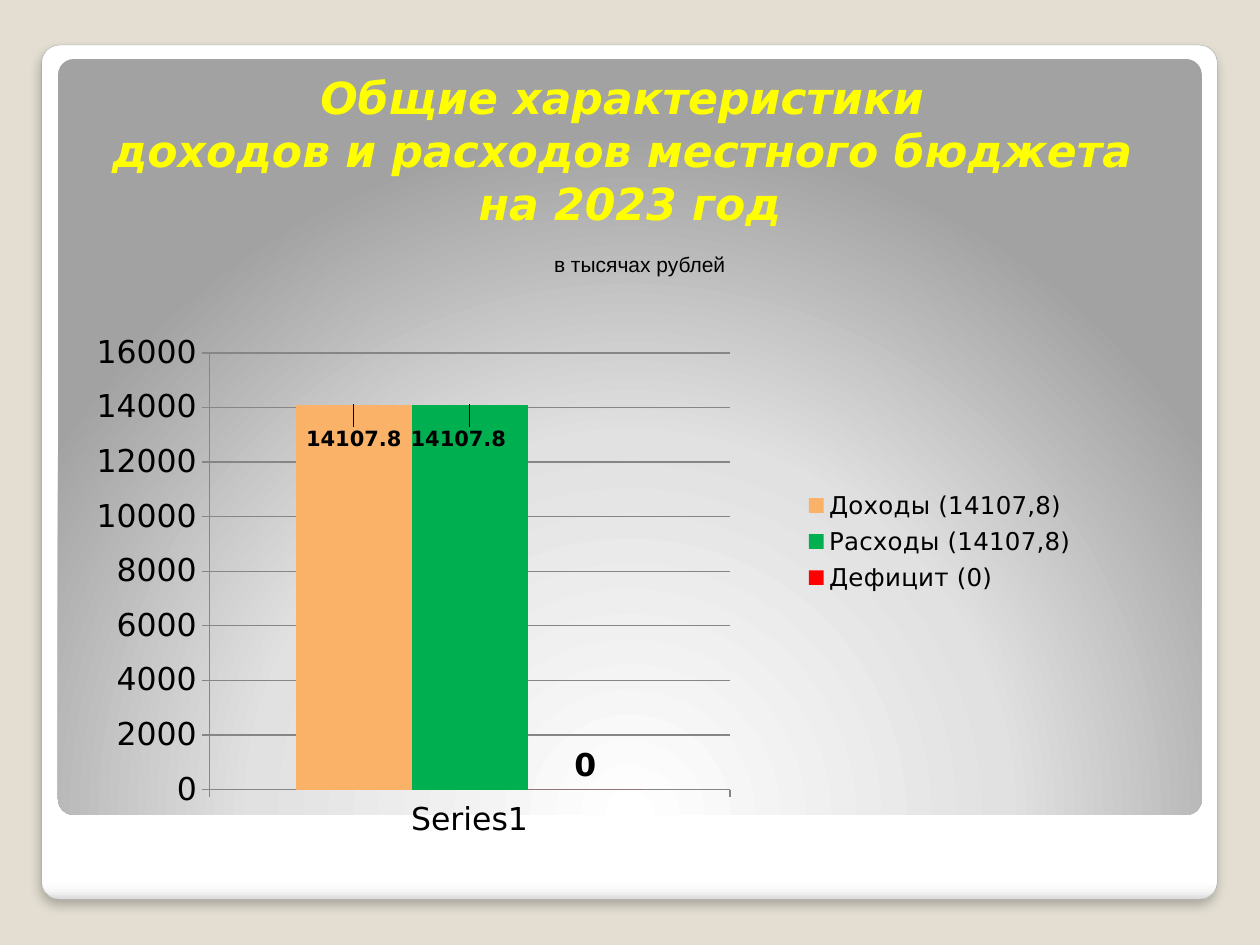
import lxml.etree
import pptx
import pptx.chart.data
import pptx.dml.color
import pptx.enum.chart
import pptx.enum.shapes
import pptx.enum.text
import pptx.oxml
import pptx.oxml.ns
import pptx.util

Cm = pptx.util.Cm
Pt = pptx.util.Pt
RGBColor = pptx.dml.color.RGBColor
qn = pptx.oxml.ns.qn

BEIGE = RGBColor(0xE3, 0xDE, 0xD1)
BORDER = RGBColor(0xA4, 0xA4, 0xA4)
GRID = RGBColor(0x86, 0x86, 0x86)
YELLOW = RGBColor(0xFF, 0xFF, 0x00)
BLACK = RGBColor(0x00, 0x00, 0x00)
ORANGE = RGBColor(0xF9, 0xB2, 0x68)
GREEN = RGBColor(0x00, 0xB0, 0x50)
RED = RGBColor(0xFF, 0x00, 0x00)
WHITE = RGBColor(0xFF, 0xFF, 0xFF)
PANEL_STOPS = [(0, WHITE), (98, WHITE), (99, RGBColor(0xF7, 0xF7, 0xF7)),
               (100, RGBColor(0xDA, 0xDA, 0xDA))]
GLOW_STOPS = [(0, WHITE), (55, RGBColor(0xE1, 0xE1, 0xE1)),
              (100, RGBColor(0xA2, 0xA2, 0xA2))]
LINEAR = '<a:lin ang="5400000" scaled="0"/>'
CIRCLE = ('<a:path path="circle"><a:fillToRect l="50000" t="175000" '
          'r="50000" b="-75000"/></a:path>')
SHADOW = ('<a:effectLst %s><a:outerShdw blurRad="76200" dist="50800" dir="5400000" '
          'algn="tl" rotWithShape="0"><a:srgbClr val="000000"><a:alpha val="25000"/>'
          '</a:srgbClr></a:outerShdw></a:effectLst>' % pptx.oxml.ns.nsdecls("a"))


class BudgetSlide:
    """Holds the fonts and the current slide, and adds styled elements to it."""

    font = "DejaVu Sans"
    note_font = "Arial"

    def __init__(self, prs):
        self.s = prs.slides.add_slide(prs.slide_layouts[6])
        fill = self.s.background.fill
        fill.solid()
        fill.fore_color.rgb = BEIGE

    def style(self, font, size, color, bold=False, italic=False, name=None):
        font.name = name or self.font
        font.size = Pt(size)
        font.color.rgb = color
        font.bold = bold
        font.italic = italic

    def panel(self, box, stops, direction, border=None, shadow=False):
        sp = self.s.shapes.add_shape(pptx.enum.shapes.MSO_SHAPE.ROUNDED_RECTANGLE,
                                     *map(Cm, box))
        sp.adjustments[0] = 0.021
        sp.shadow.inherit = False
        marks = "".join(f'<a:gs pos="{pos * 1000}"><a:srgbClr val="{color}"/></a:gs>'
                        for pos, color in stops)
        props = sp.element.spPr
        props.find(qn("a:prstGeom")).addnext(pptx.oxml.parse_xml(
            f'<a:gradFill {pptx.oxml.ns.nsdecls("a")} rotWithShape="1">'
            f'<a:gsLst>{marks}</a:gsLst>{direction}</a:gradFill>'))
        if border is None:
            sp.line.fill.background()
        else:
            sp.line.color.rgb = border
            sp.line.width = Pt(0.16)
        if shadow:
            effects = props.find(qn("a:effectLst"))
            props.replace(effects, pptx.oxml.parse_xml(SHADOW))

    def text(self, box, text, size, color, align, anchor, wrap=True, **style):
        tf = self.s.shapes.add_textbox(*map(Cm, box)).text_frame
        tf.word_wrap = wrap
        tf.vertical_anchor = anchor
        tf.text = text
        p = tf.paragraphs[0]
        p.alignment = align
        for r in p.runs:
            self.style(r.font, size, color, **style)

    def layout(self, parent, index, **values):
        layout = lxml.etree.Element(qn("c:layout"))
        manual = lxml.etree.SubElement(layout, qn("c:manualLayout"))
        for tag, value in values.items():
            lxml.etree.SubElement(manual, qn("c:" + tag)).set("val", str(value))
        for old in parent.findall(qn("c:layout")):
            parent.remove(old)
        parent.insert(index, layout)

    def column_chart(self, box, category, series):
        data = pptx.chart.data.CategoryChartData()
        data.categories = [category]
        for name, value, *_ in series:
            data.add_series(name, [value])
        chart = self.s.shapes.add_chart(
            pptx.enum.chart.XL_CHART_TYPE.COLUMN_CLUSTERED, *map(Cm, box), data).chart
        self.style(chart.font, 18, BLACK)
        chart.has_title = False
        chart.has_legend = True
        chart.legend.position = pptx.enum.chart.XL_LEGEND_POSITION.RIGHT
        chart.legend.include_in_layout = False
        self.style(chart.legend.font, 14, BLACK)
        self.layout(chart.legend._element, 1, xMode="edge", yMode="edge",
                    x=0.66, y=0.31, w=0.26, h=0.2)
        self.layout(chart.plots[0]._element.getparent(), 0, layoutTarget="inner",
                    xMode="edge", yMode="edge", x=0.142, y=0.083, w=0.462, h=0.757)
        for axis in (chart.category_axis, chart.value_axis):
            axis.format.line.color.rgb = GRID
            axis.major_tick_mark = pptx.enum.chart.XL_TICK_MARK.OUTSIDE
        axis = chart.value_axis
        axis.minimum_scale, axis.maximum_scale, axis.major_unit = 0, 16000, 2000
        axis.major_gridlines.format.line.color.rgb = GRID
        plot = chart.plots[0]
        plot.gap_width = 150
        plot.overlap = 0
        plot.vary_by_categories = False
        for ser, (_, _, color, size, shift) in zip(plot.series, series):
            ser.format.fill.solid()
            ser.format.fill.fore_color.rgb = color
            labels = ser.data_labels
            labels.show_value = True
            labels.position = pptx.enum.chart.XL_LABEL_POSITION.OUTSIDE_END
            self.style(labels.font, size, BLACK, bold=True)
            if shift:
                label = ser.points[0].data_label
                self.style(label.font, size, BLACK, bold=True)
                label.position = labels.position
                dlbl = labels._element.find(qn("c:dLbl"))
                self.layout(dlbl, 1, x=shift[0], y=shift[1])


def main():
    prs = pptx.Presentation()
    prs.slide_width, prs.slide_height = Cm(25.4), Cm(19.05)
    align = pptx.enum.text.PP_ALIGN
    anchor = pptx.enum.text.MSO_ANCHOR
    slide = BudgetSlide(prs)
    slide.panel((0.84, 0.91, 23.7, 17.22), PANEL_STOPS, LINEAR, BORDER, shadow=True)
    slide.panel((1.17, 1.19, 23.06, 15.24), GLOW_STOPS, CIRCLE)
    slide.text((1.27, 0.76, 22.86, 3.99),
               "Общие характеристики \vдоходов и расходов местного бюджета \vна 2023 год",
               25.2, YELLOW, align.CENTER, anchor.BOTTOM, bold=True, italic=True)
    slide.column_chart((0.99, 6.15, 22.73, 11.63), "Series1", [
        ("Доходы (14107,8)", 14107.8, ORANGE, 12, (0, 0.09)),
        ("Расходы (14107,8)", 14107.8, GREEN, 12, (-0.01, 0.09)),
        ("Дефицит (0)", 0, RED, 18, None)])
    slide.text((10.92, 4.95, 3.96, 0.76), "в тысячах рублей", 12, BLACK,
               align.LEFT, anchor.TOP, wrap=False, name=slide.note_font)
    prs.save("out.pptx")


if __name__ == "__main__":
    main()
